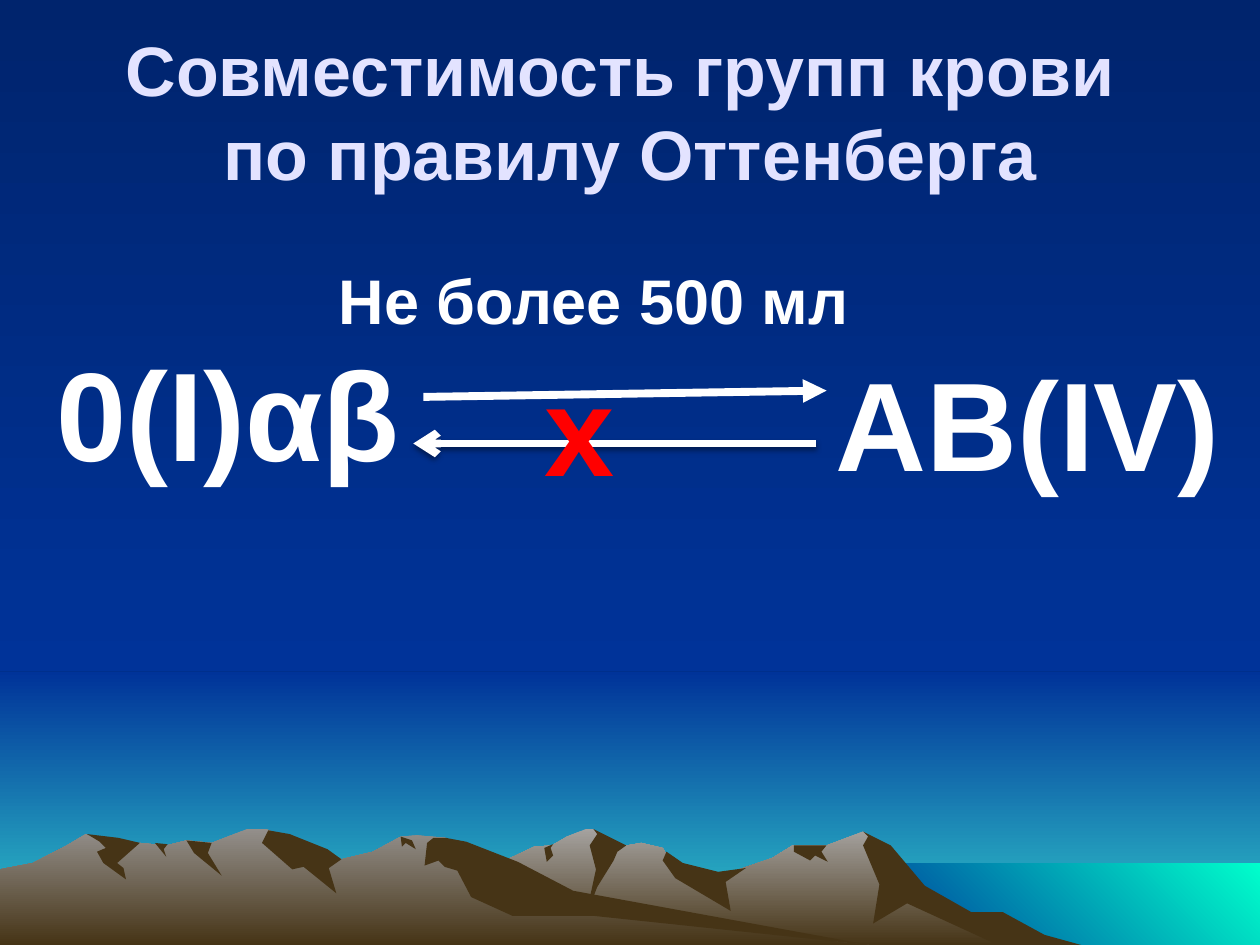
from lxml.etree import SubElement
from pptx import Presentation
from pptx.dml.color import RGBColor
from pptx.enum.shapes import MSO_CONNECTOR as LINK, MSO_SHAPE as SHAPE
from pptx.enum.text import MSO_ANCHOR as ANCHOR, PP_ALIGN as ALIGN
from pptx.oxml.ns import qn
from pptx.util import Pt

PX = 9144
WIDTH, HEIGHT = 1000, 750
HORIZON, SHORE_LEFT, SHORE_TOP = 533, 683, 685
DOWNWARD, TO_UPPER_RIGHT = 270, 45
NIGHT, BLUE, TURQUOISE, AQUA = "00246D", "003399", "33CCCC", "00FFCC"
ROCK, PALE_PEAK, GREY_PEAK = "463416", "A5A29F", "938F8B"
WHITE, RED, LAVENDER = "FFFFFF", "FF0000", "E3E3FF"


def paint(fill, colors, angle=DOWNWARD):
    shades = [RGBColor.from_string(color) for color in colors]
    if len(shades) == 1:
        fill.solid()
        fill.fore_color.rgb = shades[0]
        return
    fill.gradient()
    fill.gradient_angle = angle
    for stop, shade in zip(fill.gradient_stops, shades):
        stop.color.rgb = shade


def add_rock(shapes, outline, colors):
    builder = shapes.build_freeform(*outline[0], scale=PX)
    builder.add_line_segments(outline[1:], close=True)
    rock = builder.convert_to_shape()
    rock.shadow.inherit = False
    rock.line.fill.background()
    paint(rock.fill, colors)


prs = Presentation()
prs.slide_width, prs.slide_height = WIDTH * PX, HEIGHT * PX
slide = prs.slides.add_slide(prs.slide_layouts[6])
shapes = slide.shapes
paint(slide.background.fill, [NIGHT, BLUE])

bands = [
    (0, HORIZON, HEIGHT, [BLUE, TURQUOISE], DOWNWARD),
    (0, 0, HORIZON, [NIGHT, BLUE], DOWNWARD),
    (SHORE_LEFT, SHORE_TOP, HEIGHT, [BLUE, AQUA], TO_UPPER_RIGHT),
]
for left, top, bottom, colors, angle in bands:
    band = shapes.add_shape(SHAPE.RECTANGLE, left * PX, top * PX,
                            (WIDTH - left) * PX, (bottom - top) * PX)
    band.shadow.inherit = False
    band.line.fill.background()
    paint(band.fill, colors, angle)

right_skyline = [
    (258, HEIGHT), (327, 709), (355, 698), (405, 681), (424, 672), (438, 671),
    (450, 664), (465, 658), (471, 658), (486, 673), (509, 669), (526, 673),
    (536, 690), (566, 697), (613, 681), (629, 671), (656, 671), (685, 660),
    (702, 671), (723, 698), (764, 723), (821, HEIGHT),
]
right_shadows = {
    "seaward slope": [(685, 660), (707, 671), (734, 703), (771, 724), (796, 724),
                      (829, 742), (858, HEIGHT), (792, HEIGHT), (720, 717),
                      (693, 733), (698, 702), (685, 671), (689, 664)],
    "central peak": [(471, 658), (497, 671), (490, 676), (487, 683), (474, 704),
                     (465, 727), (473, 690), (468, 671), (474, 662)],
    "middle saddle": [(529, 676), (542, 685), (570, 692), (592, 689), (576, 700),
                      (580, 723), (536, 697), (526, 683)],
    "eastern notch": [(630, 671), (656, 671), (652, 676), (657, 684), (647, 679),
                      (643, 683), (630, 676)],
    "western notch": [(432, 673), (439, 670), (437, 673), (439, 679), (434, 684)],
}

left_skyline = [
    (0, HEIGHT), (0, 690), (26, 685), (53, 671), (68, 662), (94, 671),
    (111, 669), (132, 671), (148, 667), (168, 669), (196, 658), (212, 658),
    (223, 663), (236, 681), (260, 676), (271, 682), (296, 676), (318, 664),
    (331, 663), (354, 665), (432, 712), (667, 748), (690, HEIGHT),
]
left_shadows = {
    "tall peak": [(213, 659), (230, 662), (260, 674), (271, 682), (261, 689),
                  (267, 709), (241, 688), (232, 690), (208, 669)],
    "long slope": [(344, 665), (354, 665), (370, 668), (411, 684), (455, 707),
                   (690, HEIGHT), (472, 727), (407, 727), (374, 712), (363, 691),
                   (353, 688), (348, 683), (337, 687), (339, 669)],
    "summit nick": [(318, 664), (327, 667), (330, 674), (322, 669), (319, 672)],
    "inner gully": [(148, 667), (168, 669), (165, 677), (176, 695), (154, 677)],
    "small gully": [(123, 669), (133, 670), (130, 674), (132, 680)],
    "first peak": [(69, 662), (94, 665), (111, 669), (93, 685), (98, 689),
                   (100, 698), (82, 685), (77, 676), (84, 673), (79, 668)],
}

ranges = [
    (PALE_PEAK, right_skyline, right_shadows),
    (GREY_PEAK, left_skyline, left_shadows),
]
for peak, skyline, shadows in ranges:
    add_rock(shapes, skyline, [peak, ROCK])
    for outline in shadows.values():
        add_rock(shapes, outline, [ROCK])

arrows = [
    ((336, 315), (656, 310), "triangle", False),
    ((648, 352), (328, 352), "arrow", True),
]
for (x1, y1), (x2, y2), head, shaded in arrows:
    arrow = shapes.add_connector(LINK.STRAIGHT, x1 * PX, y1 * PX, x2 * PX, y2 * PX)
    arrow.line.width = Pt(4.5)
    paint(arrow.line.fill, [WHITE])
    SubElement(arrow.line._get_or_add_ln(), qn("a:tailEnd"), type=head)
    effects = SubElement(arrow._element.spPr, qn("a:effectLst"))
    if shaded:
        shade = SubElement(effects, qn("a:outerShdw"), blurRad=str(Pt(3.1)),
                           dist=str(Pt(1.6)), dir="5400000", rotWithShape="0")
        black = SubElement(shade, qn("a:srgbClr"), val="000000")
        SubElement(black, qn("a:alpha"), val="38000")

title = ["Совместимость групп крови ", "по правилу Оттенберга"]
labels = [
    (50, 25, 900, 125, title, 40, LAVENDER, True),
    (35, 261, 324, 131, ["0(I)αβ"], 72, WHITE, True),
    (653, 269, 347, 130, ["AB(IV)"], 72, WHITE, True),
    (422, 273, 76, 131, ["х"], 72, RED, False),
    (259, 203, 429, 71, ["Не более 500 мл"], 36, WHITE, False),
]
for left, top, width, height, lines, size, color, wraps in labels:
    label = shapes.add_textbox(left * PX, top * PX, width * PX, height * PX)
    frame = label.text_frame
    frame.word_wrap = wraps
    paragraph = frame.paragraphs[0]
    if lines is title:
        frame.vertical_anchor = ANCHOR.MIDDLE
        paragraph.alignment = ALIGN.CENTER
    for index, words in enumerate(lines):
        if index:
            paragraph.add_line_break()
        run = paragraph.add_run()
        run.text = words
        run.font.name = "Arial"
        run.font.size = Pt(size)
        run.font.bold = True
        paint(run.font.fill, [color])

prs.save("out.pptx")
